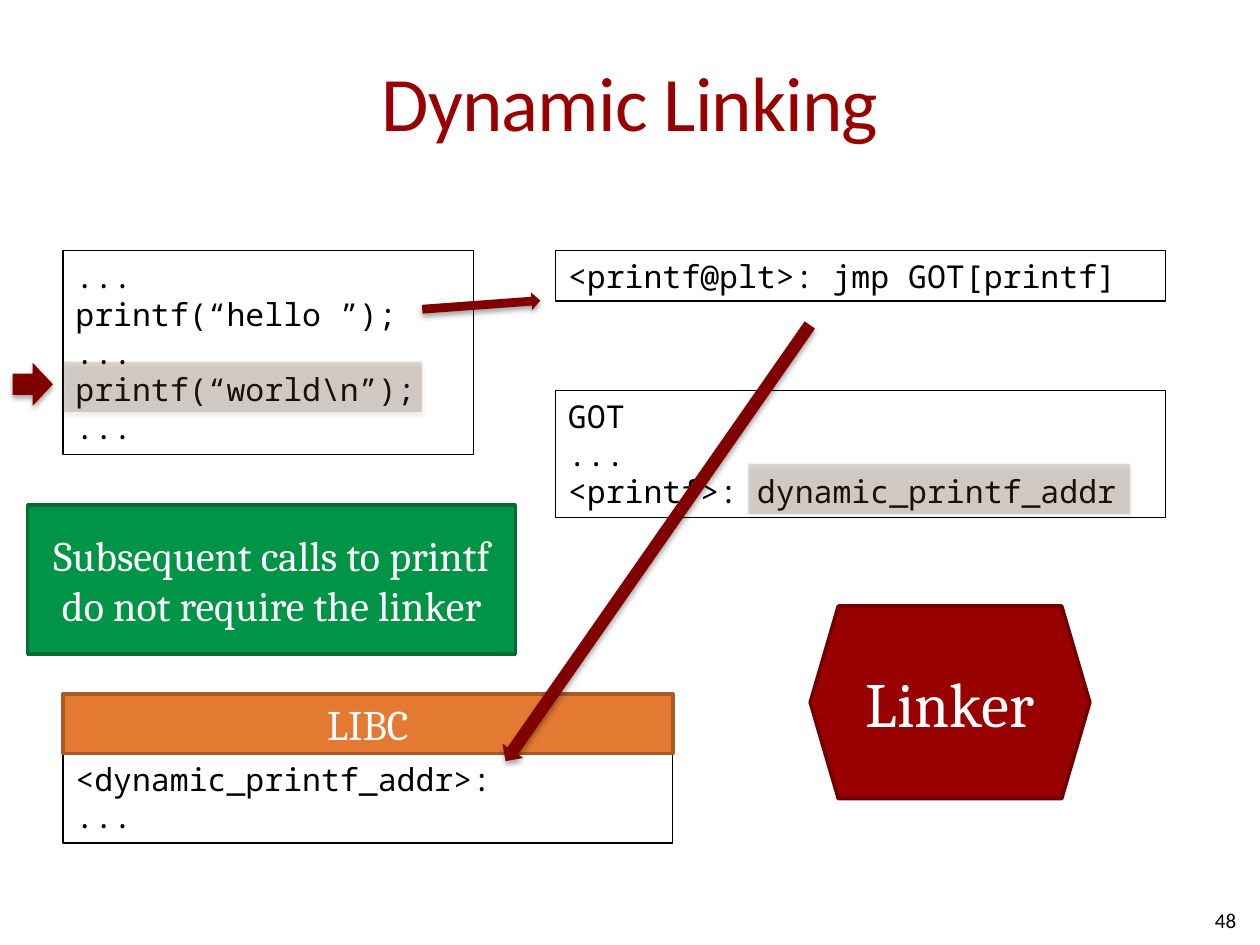
"""Build the Dynamic Linking slide."""
from lxml import etree
from pptx import Presentation
from pptx.dml.color import RGBColor
from pptx.enum.shapes import MSO_SHAPE
from pptx.enum.text import MSO_ANCHOR, PP_ALIGN
from pptx.oxml.ns import qn
from pptx.util import Inches, Pt

RECT, ARROW, HEX = MSO_SHAPE.RECTANGLE, MSO_SHAPE.RIGHT_ARROW, MSO_SHAPE.HEXAGON
TOP, MIDDLE = MSO_ANCHOR.TOP, MSO_ANCHOR.MIDDLE
LEFT, CENTER, RIGHT = PP_ALIGN.LEFT, PP_ALIGN.CENTER, PP_ALIGN.RIGHT

BLACK = RGBColor(0x00, 0x00, 0x00)
WHITE = RGBColor(0xFF, 0xFF, 0xFF)
RED = RGBColor(0x99, 0x00, 0x00)
DARK_RED = RGBColor(0x71, 0x00, 0x00)
MAROON = RGBColor(0x80, 0x00, 0x00)
BROWN = RGBColor(0x6E, 0x4A, 0x31)
ORANGE = RGBColor(0xE4, 0x79, 0x32)
RUST = RGBColor(0xA9, 0x5A, 0x25)
GREEN = RGBColor(0x00, 0x94, 0x46)
DARK_GREEN = RGBColor(0x00, 0x6D, 0x34)


def write(shape, text, font, size, color, align=LEFT, anchor=TOP):
    frame = shape.text_frame
    frame.text = text
    frame.word_wrap = True
    frame.vertical_anchor = anchor
    for para in frame.paragraphs:
        para.alignment = align
        for run in para.runs:
            run.font.name = font
            run.font.size = Pt(size)
            run.font.color.rgb = color


def add_text(slide, box, text, size, color, align):
    shape = slide.shapes.add_textbox(*map(Inches, box))
    write(shape, text, "Calibri", size, color, align, MIDDLE)
    return shape


def add_shape(slide, kind, box, fill=None, line=None, width=2):
    shape = slide.shapes.add_shape(kind, *map(Inches, box))
    shape.shadow.inherit = False
    if fill is None:
        shape.fill.background()
    else:
        shape.fill.solid()
        shape.fill.fore_color.rgb = fill
    if line is None:
        shape.line.fill.background()
    else:
        shape.line.color.rgb = line
        shape.line.width = Pt(width)
    return shape


def add_alpha(color, percent):
    etree.SubElement(color, qn("a:alpha"), val=str(percent * 1000))


def add_shadow(shape):
    effects = shape.element.spPr.find(qn("a:effectLst"))
    outer = etree.SubElement(
        effects, qn("a:outerShdw"), blurRad=str(Pt(3.1)), dist=str(Pt(1.8)),
        dir="5400000", rotWithShape="0")
    add_alpha(etree.SubElement(outer, qn("a:srgbClr"), val=str(BLACK)), 35)


def add_code(slide, box, *lines):
    shape = add_shape(slide, RECT, box, line=BLACK, width=0.75)
    write(shape, "\n".join(lines), "Noto Sans Mono", 18, BLACK)


def add_label(slide, kind, box, text, size, fill, line):
    shape = add_shape(slide, kind, box, fill, line)
    write(shape, text, "Cambria", size, WHITE, CENTER, MIDDLE)
    return shape


def add_mark(slide, box):
    shape = add_shape(slide, RECT, box, BROWN)
    add_alpha(shape.element.spPr.find(qn("a:solidFill"))[0], 22)
    add_shadow(shape)


def add_arrow(slide, box, angle=0):
    shape = add_shape(slide, ARROW, box, MAROON)
    shape.rotation = angle
    add_shadow(shape)


def add_title(slide, text):
    shape = add_text(slide, (0.5, 0.17, 9, 1.25), text, 44, RED, CENTER)
    shape.text_frame.margin_left = shape.text_frame.margin_right = 0
    for run in shape.text_frame.paragraphs[0].runs:
        run.font._element.set("spc", "-50")


def main():
    deck = Presentation()
    deck.slide_width, deck.slide_height = Inches(10), Inches(7.5)
    slide = deck.slides.add_slide(deck.slide_layouts[6])

    add_title(slide, "Dynamic Linking")
    add_code(slide, (0.5, 1.99, 3.26, 1.62), "...", "printf(“hello ”);",
             "...", "printf(“world\\n”);", "...")
    add_code(slide, (4.41, 1.99, 4.84, 0.4), "<printf@plt>: jmp GOT[printf]")
    add_code(slide, (4.41, 3.1, 4.84, 1.01), "GOT", "...",
             "<printf>: dynamic_printf_addr")
    add_mark(slide, (0.5, 2.87, 2.85, 0.4))
    add_arrow(slide, (0.1, 2.88, 0.32, 0.34))
    add_arrow(slide, (3.35, 2.35, 0.94, 0.14), 355.8)

    add_code(slide, (0.5, 5.98, 4.84, 0.71), "<dynamic_printf_addr>:", "...")
    add_label(slide, RECT, (0.5, 5.51, 4.84, 0.47), "LIBC", 24, ORANGE, RUST)
    linker = add_label(slide, HEX, (6.43, 4.81, 2.22, 1.53), "Linker", 36,
                       RED, DARK_RED)
    linker.adjustments[0] = 0.146
    add_mark(slide, (5.94, 3.68, 3.03, 0.4))
    add_label(slide, RECT, (0.22, 4.01, 3.87, 1.18),
              "Subsequent calls to printf do not require the linker", 24,
              GREEN, DARK_GREEN)
    add_arrow(slide, (3.11, 4.21, 4.22, 0.2), 124.9)
    add_text(slide, (7.58, 7.1, 2.33, 0.4), "48", 12, BLACK, RIGHT)
    deck.save("out.pptx")


if __name__ == "__main__":
    main()
